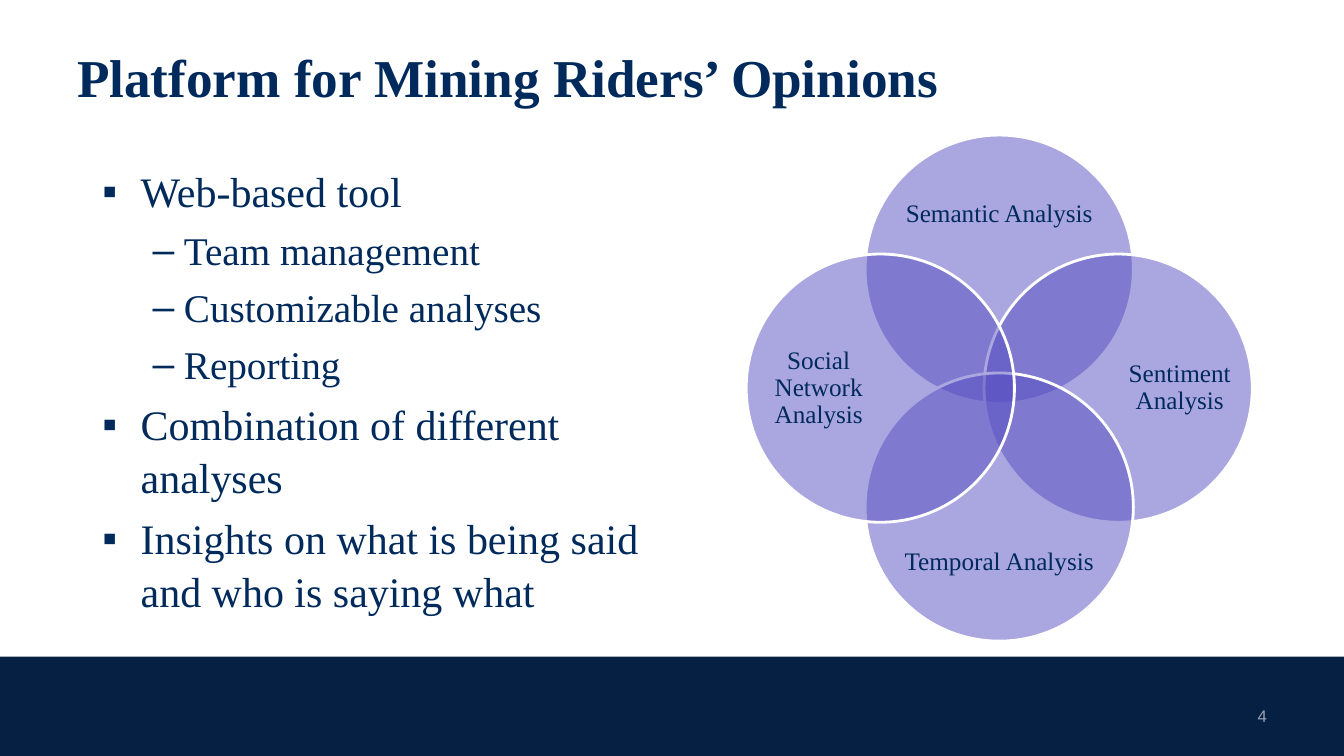
from dataclasses import dataclass

from lxml import etree
from pptx import Presentation
from pptx.dml.color import RGBColor
from pptx.enum.shapes import MSO_SHAPE
from pptx.enum.text import MSO_ANCHOR, PP_ALIGN
from pptx.oxml.ns import qn
from pptx.util import Pt

RECTANGLE, OVAL = MSO_SHAPE.RECTANGLE, MSO_SHAPE.OVAL
TOP, MIDDLE = MSO_ANCHOR.TOP, MSO_ANCHOR.MIDDLE
LEFT, CENTER, RIGHT = PP_ALIGN.LEFT, PP_ALIGN.CENTER, PP_ALIGN.RIGHT


@dataclass(frozen=True)
class Theme:
    """Colours, fonts and type sizes of the slide."""

    ink: RGBColor = RGBColor(0x00, 0x2A, 0x5C)
    band: RGBColor = RGBColor(0x05, 0x20, 0x43)
    number: RGBColor = RGBColor(0x96, 0xA1, 0xB3)
    circle: RGBColor = RGBColor(0x56, 0x4E, 0xC2)
    white: RGBColor = RGBColor(0xFF, 0xFF, 0xFF)
    serif: str = "Times New Roman"
    sans: str = "Arial"
    title_size: int = 38
    bullet_sizes: tuple = (30, 28)
    label_size: int = 18
    number_size: int = 12


THEME = Theme()
BULLET_STYLES = (("▪", 27.4, 27.4), ("–", 58.3, 22.3))
BULLETS = (
    (0, "Web-based tool"),
    (1, "Team management"),
    (1, "Customizable analyses"),
    (1, "Reporting"),
    (0, "Combination of different analyses"),
    (0, "Insights on what is being said and who is saying what"),
)
ANALYSES = (
    ("Semantic Analysis", 0, -1),
    ("Sentiment Analysis", 1, 0),
    ("Temporal Analysis", 0, 1),
    ("Social Network Analysis", -1, 0),
)


def style_font(paragraph, size, color=THEME.ink, name=THEME.serif, bold=False):
    """Set the font of a whole paragraph."""
    font = paragraph.font
    font.size, font.name, font.bold = Pt(size), name, bold
    font.color.rgb = color


def add_frame(slide, box, anchor=TOP, inset=None):
    """Add a wrapping text box and return its text frame."""
    frame = slide.shapes.add_textbox(*map(Pt, box)).text_frame
    frame.word_wrap = True
    frame.vertical_anchor = anchor
    if inset is not None:
        frame.margin_left = frame.margin_right = Pt(inset)
        frame.margin_top = frame.margin_bottom = Pt(inset)
    return frame


def add_line(frame, text, alignment=LEFT):
    """Write the only paragraph of a frame and return it."""
    paragraph = frame.paragraphs[0]
    paragraph.text = text
    paragraph.alignment = alignment
    return paragraph


def add_filled(slide, kind, box, color):
    """Add a shadowless shape with a solid fill."""
    shape = slide.shapes.add_shape(kind, *map(Pt, box))
    shape.shadow.inherit = False
    shape.fill.solid()
    shape.fill.fore_color.rgb = color
    return shape


def add_footer(slide, box, number):
    """Draw the dark band with the slide number at its right."""
    left, top, width, height = box
    add_filled(slide, RECTANGLE, box, THEME.band).line.fill.background()
    frame = add_frame(slide, (left + width - 121, top + 28, 73, 29), MIDDLE)
    paragraph = add_line(frame, number, RIGHT)
    style_font(paragraph, THEME.number_size, THEME.number, THEME.sans)


def add_title(slide, box, text):
    """Write the slide title."""
    paragraph = add_line(add_frame(slide, box, MIDDLE), text)
    style_font(paragraph, THEME.title_size, bold=True)


def add_bullets(slide, box, bullets):
    """Write the two-level bullet list."""
    frame = add_frame(slide, box)
    for index, (level, text) in enumerate(bullets):
        paragraph = frame.add_paragraph() if index else frame.paragraphs[0]
        paragraph.text = text
        paragraph.level = level
        paragraph.line_spacing = 1.05
        size = THEME.bullet_sizes[level]
        if index:
            paragraph.space_before = Pt(size * 0.2)
        character, margin, hanging = BULLET_STYLES[level]
        properties = paragraph._p.get_or_add_pPr()
        properties.set("marL", str(Pt(margin)))
        properties.set("indent", str(-Pt(hanging)))
        etree.SubElement(properties, qn("a:buFont"), typeface=THEME.sans)
        etree.SubElement(properties, qn("a:buChar"), char=character)
        style_font(paragraph, size)


def add_venn(slide, box, analyses):
    """Draw four overlapping translucent circles with labels."""
    left, top, size, _ = box
    diameter = size * 0.53
    reach = (size - diameter) / 2
    middle_x, middle_y = left + size / 2, top + size / 2
    for text, across, down in analyses:
        x, y = middle_x + across * reach, middle_y + down * reach
        circle_box = (x - diameter / 2, y - diameter / 2, diameter, diameter)
        circle = add_filled(slide, OVAL, circle_box, THEME.circle)
        color = circle.fill._xPr.find(qn("a:solidFill"))[0]
        etree.SubElement(color, qn("a:alpha"), val="50000")
        circle.line.color.rgb = THEME.white
        circle.line.width = Pt(2)
        width, height = (73.5, 147.5) if across else (147.5, 60.5)
        x, y = x + across * 44, y + down * 39.5
        label_box = (x - width / 2, y - height / 2, width, height)
        paragraph = add_line(add_frame(slide, label_box, MIDDLE, 0), text, CENTER)
        paragraph.line_spacing = 0.9
        style_font(paragraph, THEME.label_size)


def main():
    """Build the slide and save it."""
    presentation = Presentation()
    presentation.slide_width, presentation.slide_height = Pt(960), Pt(540)
    slide = presentation.slides.add_slide(presentation.slide_layouts[6])
    add_footer(slide, (0, 469, 960, 71), "4")
    add_title(slide, (48, 22.5, 864, 64), "Platform for Mining Riders’ Opinions")
    add_bullets(slide, (66, 113, 408, 342), BULLETS)
    add_venn(slide, (533, 96.5, 361.5, 361.5), ANALYSES)
    presentation.save("out.pptx")


if __name__ == "__main__":
    main()
